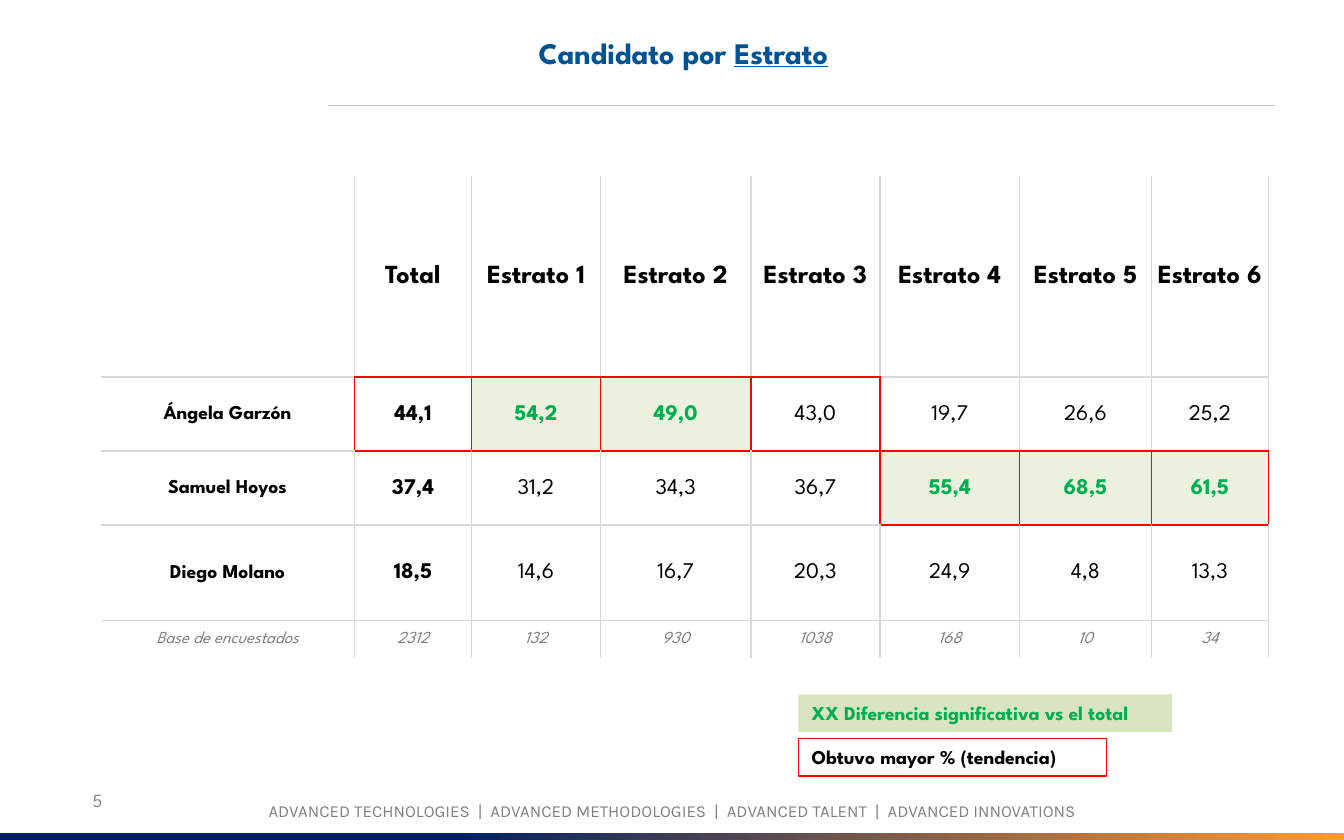
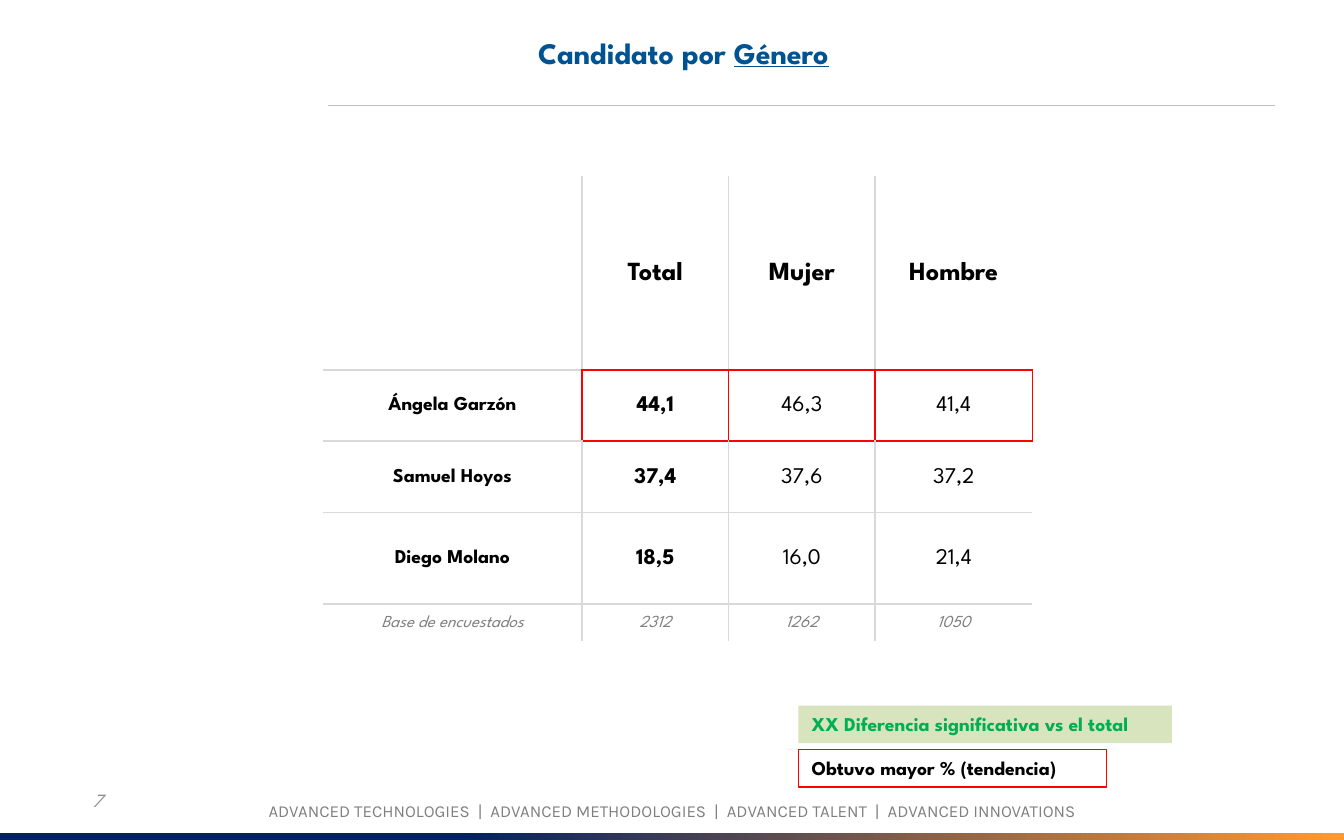
from dataclasses import dataclass
from typing import Optional

from lxml import etree
from pptx import Presentation
from pptx.dml.color import RGBColor
from pptx.enum.shapes import MSO_CONNECTOR, MSO_SHAPE
from pptx.enum.text import MSO_ANCHOR, PP_ALIGN
from pptx.oxml.ns import qn
from pptx.util import Cm, Pt

CENTER, LEFT = PP_ALIGN.CENTER, PP_ALIGN.LEFT
TOP, MIDDLE = MSO_ANCHOR.TOP, MSO_ANCHOR.MIDDLE
RECTANGLE = MSO_SHAPE.RECTANGLE
STRAIGHT = MSO_CONNECTOR.STRAIGHT


@dataclass(frozen=True)
class Theme:
    heading_font: str = "League Spartan"
    footer_font: str = "Karla"
    navy: str = "002060"
    orange: str = "FF9933"
    title: str = "005392"
    ink: str = "000000"
    muted: str = "808080"
    number: str = "8C8C8C"
    rule: str = "BFBFBF"
    grid: str = "D9D9D9"
    leader: str = "FF0000"
    white: str = "FFFFFF"
    significant: str = "00B050"
    significant_cell: str = "EBF1DE"
    significant_key: str = "D7E4BD"
    title_size: float = 16
    header_size: float = 14
    value_size: float = 12
    label_size: float = 10.5
    number_size: float = 10
    small_size: float = 9


THEME = Theme()


@dataclass(frozen=True)
class Area:
    """Position and size in centimetres."""
    left: float
    top: float
    width: float
    height: float

    def lengths(self) -> tuple:
        return Cm(self.left), Cm(self.top), Cm(self.width), Cm(self.height)


@dataclass(frozen=True)
class Style:
    size: float
    color: str
    bold: bool = False
    italic: bool = False
    font: str = THEME.heading_font


@dataclass(frozen=True)
class Survey:
    """One page: results of each candidate by group."""
    topic: str
    number: int
    number_italic: bool
    table_left: float
    column_widths: list[float]
    row_heights: list[float]
    groups: list[str]
    results: dict[str, list[float]]
    bases: list[int]
    significant: set[tuple[int, int]]
    closed_right: bool
    legend_top: float


SURVEYS = [
    Survey(
        topic="Estrato", number=5, number_italic=False, table_left=1.9,
        column_widths=[4.8, 2.21, 2.44, 2.84, 2.44, 2.64, 2.49, 2.21],
        row_heights=[3.8, 1.4, 1.4, 1.8, 0.71],
        groups=["Total"] + [f"Estrato {level}" for level in range(1, 7)],
        results={
            "Ángela Garzón": [44.1, 54.2, 49.0, 43.0, 19.7, 26.6, 25.2],
            "Samuel Hoyos": [37.4, 31.2, 34.3, 36.7, 55.4, 68.5, 61.5],
            "Diego Molano": [18.5, 14.6, 16.7, 20.3, 24.9, 4.8, 13.3],
        },
        bases=[2312, 132, 930, 1038, 168, 10, 34],
        significant={(1, 2), (1, 3), (2, 5), (2, 6), (2, 7)},
        closed_right=True, legend_top=13.13),
    Survey(
        topic="Género", number=7, number_italic=True, table_left=6.1,
        column_widths=[4.9, 2.77, 2.77, 2.97],
        row_heights=[3.66, 1.35, 1.35, 1.73, 0.69],
        groups=["Total", "Mujer", "Hombre"],
        results={
            "Ángela Garzón": [44.1, 46.3, 41.4],
            "Samuel Hoyos": [37.4, 37.6, 37.2],
            "Diego Molano": [18.5, 16.0, 21.4],
        },
        bases=[2312, 1262, 1050],
        significant=set(), closed_right=False, legend_top=13.34),
]

FOOTER = "  |  ".join(f"ADVANCED {word}" for word in
                      ("TECHNOLOGIES", "METHODOLOGIES", "TALENT", "INNOVATIONS"))
TABLE_TOP = 3.33
LEGEND_LEFT, LEGEND_STEP, LEGEND_HEIGHT = 15.09, 0.83, 0.71
CELL_MARGIN = Cm(0.03)
# Border tag and step to the neighbouring cell
SIDES = {"a:lnL": (0, -1), "a:lnR": (0, 1), "a:lnT": (-1, 0), "a:lnB": (1, 0)}


# Text and shapes
def rgb(color: str) -> RGBColor:
    return RGBColor.from_string(color)


def format_text(frame, style: Style, align=CENTER) -> None:
    for para in frame.paragraphs:
        para.alignment = align
        for span in para.runs:
            span.font.name = style.font
            span.font.size = Pt(style.size)
            span.font.bold = style.bold
            span.font.italic = style.italic
            span.font.color.rgb = rgb(style.color)


def add_text(page, area: Area, text: str, style: Style, anchor=MIDDLE):
    box = page.shapes.add_textbox(*area.lengths())
    frame = box.text_frame
    frame.word_wrap = True
    frame.vertical_anchor = anchor
    frame.text = text
    format_text(frame, style)
    return box


def add_rectangle(page, area: Area):
    box = page.shapes.add_shape(RECTANGLE, *area.lengths())
    box.shadow.inherit = False
    box.line.fill.background()
    return box


# Frame shared by all pages
def add_page_frame(page, survey: Survey) -> None:
    band = add_rectangle(page, Area(0, 15.75, 25.4, 0.13))
    band.fill.gradient()
    band.fill.gradient_angle = 0
    stops = ((0.34, THEME.navy), (1, THEME.orange))
    for stop, (position, color) in zip(band.fill.gradient_stops, stops):
        stop.position = position
        stop.color.rgb = rgb(color)

    add_text(page, Area(-0.03, 14.91, 25.45, 0.84), FOOTER,
             Style(THEME.small_size, THEME.muted, font=THEME.footer_font))
    add_text(page, Area(0.46, 14.71, 2.77, 0.84), str(survey.number),
             Style(THEME.number_size, THEME.number, italic=survey.number_italic))

    rule = page.shapes.add_connector(STRAIGHT, Cm(6.2), Cm(2), Cm(24.1), Cm(2))
    rule.line.color.rgb = rgb(THEME.rule)
    rule.line.width = Pt(0.75)
    etree.SubElement(rule._element.spPr, qn("a:effectLst"))


def add_title(page, topic: str) -> None:
    box = add_text(page, Area(3.1, 0.53, 19.63, 0.94), "Candidato por ",
                   Style(THEME.title_size, THEME.title, bold=True), TOP)
    para = box.text_frame.paragraphs[0]
    span = para.add_run()
    span.text = topic
    format_text(box.text_frame, Style(THEME.title_size, THEME.title, bold=True))
    span.font.underline = True


# Results table
def find_leaders(survey: Survey) -> set[tuple[int, int]]:
    leaders = set()
    for column, scores in enumerate(zip(*survey.results.values()), start=1):
        leaders.add((scores.index(max(scores)) + 1, column))
    return leaders


def border_color(survey: Survey, leaders: set, here: tuple[int, int],
                 step: tuple[int, int]) -> Optional[str]:
    there = (here[0] + step[0], here[1] + step[1])
    if here in leaders or there in leaders:
        return THEME.leader
    inside = (0 <= there[0] < len(survey.row_heights)
              and 0 <= there[1] < len(survey.column_widths))
    closing = survey.closed_right and there[1] == len(survey.column_widths)
    return THEME.grid if inside or closing else None


def set_border(cell, tag: str, color: Optional[str]) -> None:
    border = etree.SubElement(cell._tc.get_or_add_tcPr(), qn(tag), w=str(Pt(1)))
    if color is None:
        etree.SubElement(border, qn("a:noFill"))
    else:
        fill = etree.SubElement(border, qn("a:solidFill"))
        etree.SubElement(fill, qn("a:srgbClr"), val=color)


def cell_style(survey: Survey, row: int, column: int) -> Style:
    if row == 0:
        return Style(THEME.header_size, THEME.ink, bold=True)
    if row == len(survey.row_heights) - 1:
        return Style(THEME.small_size, THEME.muted, italic=True)
    if column == 0:
        return Style(THEME.label_size, THEME.ink, bold=True)
    if (row, column) in survey.significant:
        return Style(THEME.value_size, THEME.significant, bold=True)
    return Style(THEME.value_size, THEME.ink, bold=column == 1)


def add_results(page, survey: Survey) -> None:
    rows = [["", *survey.groups]]
    for name, scores in survey.results.items():
        rows.append([name, *(f"{score:.1f}".replace(".", ",") for score in scores)])
    rows.append(["Base de encuestados", *map(str, survey.bases)])

    area = Area(survey.table_left, TABLE_TOP,
                sum(survey.column_widths), sum(survey.row_heights))
    table = page.shapes.add_table(len(rows), len(rows[0]), *area.lengths()).table
    table.first_row = table.horz_banding = False
    for column, width in zip(table.columns, survey.column_widths):
        column.width = Cm(width)
    for row, height in zip(table.rows, survey.row_heights):
        row.height = Cm(height)

    leaders = find_leaders(survey)
    for row, texts in enumerate(rows):
        for column, text in enumerate(texts):
            cell = table.cell(row, column)
            cell.text = text
            cell.vertical_anchor = MIDDLE
            cell.margin_left = cell.margin_right = cell.margin_top = CELL_MARGIN
            cell.margin_bottom = 0
            format_text(cell.text_frame, cell_style(survey, row, column))
            for tag, step in SIDES.items():
                set_border(cell, tag, border_color(survey, leaders, (row, column), step))
            if (row, column) in survey.significant:
                cell.fill.solid()
                cell.fill.fore_color.rgb = rgb(THEME.significant_cell)
            else:
                cell.fill.background()


# Legend
def add_legend_key(page, top: float, width: float, text: str, color: str,
                   fill: str, line: Optional[str] = None) -> None:
    key = add_rectangle(page, Area(LEGEND_LEFT, top, width, LEGEND_HEIGHT))
    key.fill.solid()
    key.fill.fore_color.rgb = rgb(fill)
    if line:
        key.line.color.rgb = rgb(line)
        key.line.width = Pt(0.75)
    frame = key.text_frame
    frame.word_wrap = True
    frame.vertical_anchor = TOP
    frame.text = text
    format_text(frame, Style(THEME.label_size, color, bold=True), LEFT)


def add_legend(page, top: float) -> None:
    add_legend_key(page, top + LEGEND_STEP, 5.82, "Obtuvo mayor % (tendencia)",
                   THEME.ink, THEME.white, THEME.leader)
    add_legend_key(page, top, 7.06, "XX Diferencia significativa vs el total",
                   THEME.significant, THEME.significant_key)


def main() -> None:
    deck = Presentation()
    deck.slide_width, deck.slide_height = Cm(25.4), Cm(15.88)
    blank = deck.slide_layouts[6]
    for survey in SURVEYS:
        page = deck.slides.add_slide(blank)
        add_page_frame(page, survey)
        add_title(page, survey.topic)
        add_results(page, survey)
        add_legend(page, survey.legend_top)
    deck.save("out.pptx")


if __name__ == "__main__":
    main()
